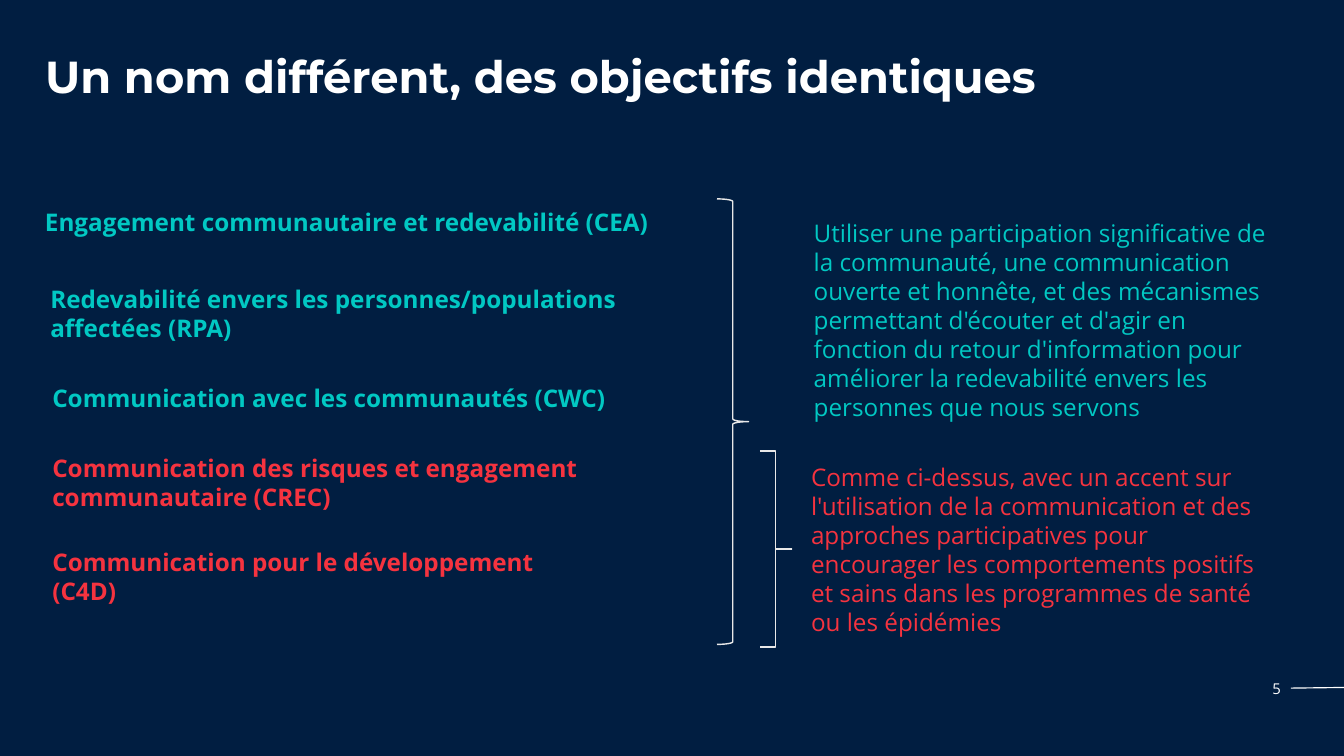
"""Build the slide comparing community engagement terms and their shared aims."""
from lxml import etree
from pptx import Presentation
from pptx.dml.color import RGBColor
from pptx.enum.shapes import MSO_CONNECTOR, MSO_SHAPE
from pptx.enum.text import MSO_ANCHOR, MSO_AUTO_SIZE, PP_ALIGN
from pptx.oxml.ns import qn
from pptx.util import Pt

PX = 9144
STRAIGHT = MSO_CONNECTOR.STRAIGHT
BRACE = MSO_SHAPE.RIGHT_BRACE
TOP, MIDDLE = MSO_ANCHOR.TOP, MSO_ANCHOR.MIDDLE
LEFT, RIGHT = PP_ALIGN.LEFT, PP_ALIGN.RIGHT
NO_AUTOFIT = MSO_AUTO_SIZE.NONE

COLORS = {
    "navy": "011E41",
    "white": "FFFFFF",
    "grey": "E8E8E8",
    "teal": "01C8C3",
    "red": "F5333F",
}

TERMS = [
    (57, 303, 922, 98, "teal", "Engagement communautaire et redevabilité (CEA)"),
    (65, 418, 942, 141, "teal",
     "Redevabilité envers les personnes/populations affectées (RPA)"),
    (68, 565, 986, 98, "teal", "Communication avec les communautés (CWC)"),
    (68, 670, 986, 141, "red",
     "Communication des risques et engagement communautaire (CREC)"),
    (68, 810, 818, 141, "red", "Communication pour le développement (C4D)"),
]

AIMS = [
    (1201, 296, 702, 360, "teal",
     "Utiliser une participation significative de la communauté, une "
     "communication ouverte et honnête, et des mécanismes permettant d'écouter "
     "et d'agir en fonction du retour d'information pour améliorer la "
     "redevabilité envers les personnes que nous servons"),
    (1197, 681, 705, 273, "red",
     "Comme ci-dessus, avec un accent sur l'utilisation de la communication et "
     "des approches participatives pour encourager les comportements positifs "
     "et sains dans les programmes de santé ou les épidémies"),
]

BRACES = [(1067, 296, 47, 663, 0.083), (1131, 671, 47, 292, 0)]


def px(*lengths):
    return [length * PX for length in lengths]


def rgb(name):
    return RGBColor.from_string(COLORS[name])


def write(tf, text, size, color, bold=False, font="Open Sans", align=LEFT, anchor=TOP):
    tf.word_wrap = True
    tf.auto_size = NO_AUTOFIT
    tf.vertical_anchor = anchor
    p = tf.paragraphs[0]
    p.alignment = align
    r = p.add_run()
    r.text = text
    r.font.name = font
    r.font.size = Pt(size)
    r.font.bold = bold
    r.font.color.rgb = rgb(color)
    return p


def add_title(s, text):
    sp = s.shapes.title
    sp.left, sp.top, sp.width, sp.height = px(57, 77, 1885, 164)
    p = write(sp.text_frame, text, 48, "white", bold=True, font="Montserrat")
    p.line_spacing = 0.9


def add_text(s, x, y, w, h, color, text, size=26, **style):
    sp = s.shapes.add_textbox(*px(x, y, w, h))
    write(sp.text_frame, text, size, color, **style)


def add_brace(s, x, y, w, h, curve):
    sp = s.shapes.add_shape(BRACE, *px(x, y, w, h))
    sp.shadow.inherit = False
    sp.adjustments[0] = curve
    sp.adjustments[1] = 0.5
    sp.fill.background()
    sp.line.color.rgb = rgb("grey")
    sp.line.width = Pt(1.5)


def add_line(s, x1, y1, x2, y2):
    line = s.shapes.add_connector(STRAIGHT, *px(x1, y1, x2, y2))
    line.line.color.rgb = rgb("white")
    line.line.width = Pt(1.25)
    etree.SubElement(line._element.spPr, qn("a:effectLst"))


def main():
    prs = Presentation()
    prs.slide_width, prs.slide_height = px(2000, 1125)
    s = prs.slides.add_slide(prs.slide_layouts[5])
    s.background.fill.solid()
    s.background.fill.fore_color.rgb = rgb("navy")

    add_text(s, 1844, 1006, 72, 37, "white", "5", size=16, align=RIGHT)
    add_line(s, 1921, 1024, 2000, 1023)
    add_title(s, "Un nom différent, des objectifs identiques")
    for term in TERMS:
        add_text(s, *term, bold=True)
    for brace in BRACES:
        add_brace(s, *brace)
    for aim in AIMS:
        add_text(s, *aim, anchor=MIDDLE)
    prs.save("out.pptx")


if __name__ == "__main__":
    main()
